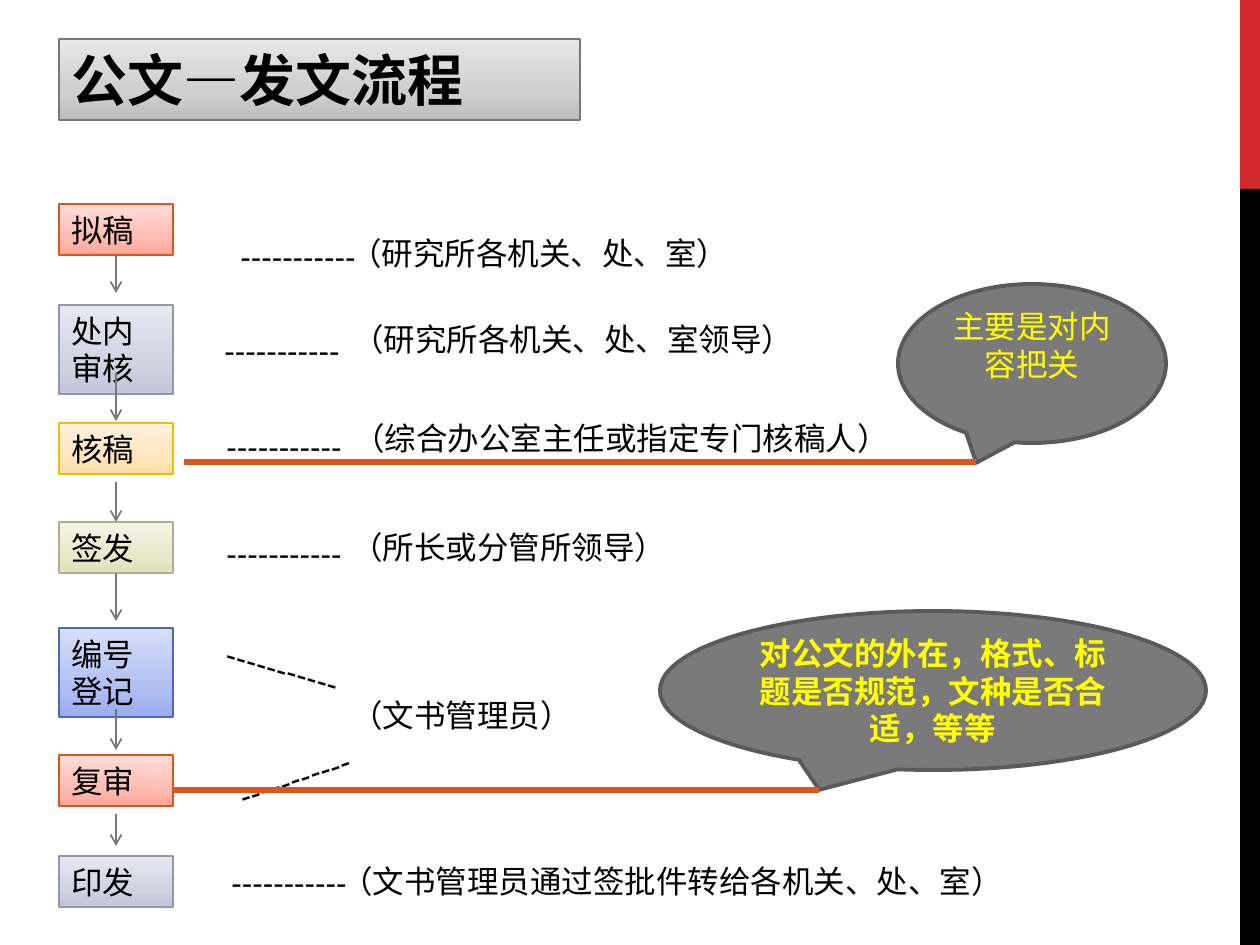
import copy
from dataclasses import dataclass

import pptx
import pptx.dml.color
import pptx.enum.shapes
import pptx.enum.text
import pptx.oxml.ns
import pptx.util
from lxml import etree

SHAPE = pptx.enum.shapes.MSO_SHAPE
ALIGN = pptx.enum.text.PP_ALIGN
ANCHOR = pptx.enum.text.MSO_ANCHOR
AUTO_SIZE = pptx.enum.text.MSO_AUTO_SIZE
EMU_PER_PX = 914400 / 126
DASHES = "-" * 11
TOP, BOTTOM = 0, 2


@dataclass(frozen=True)
class Theme:
    latin: str = "Arial"
    cjk: str = "Noto Sans CJK SC"
    title_size: int = 32
    body_size: int = 18
    thin: float = 1
    medium: float = 2.25
    thick: float = 3
    text: str = "000000"
    highlight: str = "FFFF00"
    bar_red: str = "D1282E"
    bar_black: str = "000000"
    arrow: str = "777777"
    guide: str = "DC551F"
    callout: tuple = ("7A7A7A", "5A5A5A")
    # Gradient from bottom to top, then the outline
    grey: tuple = ("BEBEBE", "CFCFCF", "E7E7E7", "777777")
    red: tuple = ("FFA698", "FFBCB3", "FFDED9", "DC551F")
    lilac: tuple = ("C3C5D9", "D1D3E3", "E8E8F1", "9496A9")
    amber: tuple = ("FFDFA5", "FFE6BD", "FFF2DF", "F1BE00")
    olive: tuple = ("E1E0BC", "E9E8CB", "F4F4E5", "B1B08E")
    blue: tuple = ("9AACED", "B2C0F3", "D8DFF9", "4E6AAE")


def px(n):
    return pptx.util.Emu(round(n * EMU_PER_PX))


def rgb(value):
    return pptx.dml.color.RGBColor.from_string(value)


def qn(tag):
    return pptx.oxml.ns.qn(tag)


class SlideBuilder:
    def __init__(self, slide, theme):
        self.s = slide
        self.theme = theme

    def add_text(self, sp, text, size=None, color=None, bold=False,
                 font=None, align=ALIGN.LEFT):
        th = self.theme
        tf = sp.text_frame
        tf.word_wrap = True
        for i, line in enumerate(text.split("\n")):
            p = tf.add_paragraph() if i else tf.paragraphs[0]
            p.alignment = align
            r = p.add_run()
            r.text = line
            r.font.name = font or th.latin
            r.font.size = pptx.util.Pt(size or th.body_size)
            r.font.bold = bold
            r.font.color.rgb = rgb(color or th.text)
            ea = etree.SubElement(r._r.get_or_add_rPr(), qn("a:ea"))
            ea.set("typeface", th.cjk)
        return tf

    def shape(self, kind, box, fill=None, line=None, width=None):
        sp = self.s.shapes.add_shape(kind, *map(px, box))
        sp.shadow.inherit = False
        if fill:
            sp.fill.solid()
            sp.fill.fore_color.rgb = rgb(fill)
        if line:
            sp.line.color.rgb = rgb(line)
            sp.line.width = pptx.util.Pt(width)
        else:
            sp.line.fill.background()
        return sp

    def gradient_box(self, box, text, palette, **style):
        *colors, outline = palette
        sp = self.shape(SHAPE.RECTANGLE, box, line=outline, width=self.theme.thin)
        sp.fill.gradient()
        sp.fill.gradient_angle = 90
        stop_list = sp._element.spPr.find(".//" + qn("a:gsLst"))
        stop_list.append(copy.deepcopy(stop_list[-1]))
        for stop, color, position in zip(sp.fill.gradient_stops, colors, (0, 0.35, 1)):
            stop.color.rgb = rgb(color)
            stop.position = position
        self.add_text(sp, text, **style).auto_size = AUTO_SIZE.SHAPE_TO_FIT_TEXT
        return sp

    def label(self, x, y, w, text, rotation=0):
        sp = self.s.shapes.add_textbox(px(x), px(y), px(w), px(51))
        sp.rotation = rotation
        self.add_text(sp, text).auto_size = AUTO_SIZE.SHAPE_TO_FIT_TEXT

    def callout(self, box, text, bold=False, bottom_inset=6):
        fill, line = self.theme.callout
        sp = self.shape(SHAPE.OVAL_CALLOUT, box, fill, line, self.theme.medium)
        tf = self.add_text(sp, text, color=self.theme.highlight, bold=bold,
                           align=ALIGN.CENTER)
        tf.vertical_anchor = ANCHOR.MIDDLE
        tf.margin_bottom = px(bottom_inset)

    def line(self, x1, y1, x2, y2, color, width):
        cx = self.s.shapes.add_connector(
            pptx.enum.shapes.MSO_CONNECTOR.STRAIGHT, *map(px, (x1, y1, x2, y2)))
        cx.line.color.rgb = rgb(color)
        cx.line.width = pptx.util.Pt(width)
        etree.SubElement(cx._element.spPr, qn("a:effectLst"))
        return cx

    def arrow(self, x, y1, y2, source=None, target=None):
        """Draw a downward arrow, joined to the steps that it touches."""
        cx = self.line(x, y1, x, y2, self.theme.arrow, self.theme.thin)
        tail = etree.SubElement(cx._element.spPr.find(qn("a:ln")), qn("a:tailEnd"))
        tail.set("type", "arrow")
        if source is not None:
            cx.begin_connect(source, BOTTOM)
        if target is not None:
            cx.end_connect(target, TOP)


def main():
    prs = pptx.Presentation()
    prs.slide_width, prs.slide_height = px(1260), px(945)
    th = Theme()
    b = SlideBuilder(prs.slides.add_slide(prs.slide_layouts[6]), th)

    b.shape(SHAPE.RECTANGLE, (1240, 0, 20, 189), th.bar_red)
    b.shape(SHAPE.RECTANGLE, (1240, 189, 20, 756), th.bar_black)
    b.gradient_box((59, 39, 521, 81), "公文—发文流程", th.grey,
                   size=th.title_size, bold=True, font=th.cjk)

    steps = [
        b.gradient_box((59, y, 114, h), text, palette)
        for y, h, text, palette in (
            (204, 51, "拟稿", th.red),
            (305, 89, "处内审核", th.lilac),
            (423, 51, "核稿", th.amber),
            (522, 51, "签发", th.olive),
            (628, 89, "编号\n登记", th.blue),
            (755, 51, "复审", th.red),
            (856, 51, "印发", th.lilac),
        )
    ]
    sign = steps[3]
    for y1, y2, source, target in (
        (255, 293, steps[0], None),
        (373, 421, None, None),
        (482, 522, None, sign),
        (573, 621, sign, None),
        (709, 750, None, None),
        (814, 846, None, None),
    ):
        b.arrow(116, y1, y2, source, target)

    for x, y, rotation in (
        (228, 231, 0), (212, 325, 0), (214, 421, 0), (214, 528, 0),
        (212, 646, 16.5), (224, 750, 341.3), (219, 857, 0),
    ):
        b.label(x, y, 159, DASHES, rotation)

    for x, y, w, text in (
        (338, 228, 422, "（研究所各机关、处、室）"),
        (340, 314, 478, "（研究所各机关、处、室领导）"),
        (341, 413, 587, "（综合办公室主任或指定专门核稿人）"),
        (339, 522, 357, "（所长或分管所领导）"),
        (339, 690, 378, "（文书管理员）"),
        (329, 856, 917, "（文书管理员通过签批件转给各机关、处、室）"),
    ):
        b.label(x, y, w, text)

    b.callout((898, 284, 268, 159), "主要是对内容把关", bottom_inset=44)
    b.callout((660, 611, 546, 159),
              "对公文的外在，格式、标题是否规范，文种是否合适，等等", bold=True)
    b.line(174, 790, 819, 790, th.guide, th.thick)
    b.line(184, 462, 976, 462, th.guide, th.thick)

    prs.save("out.pptx")


if __name__ == "__main__":
    main()
